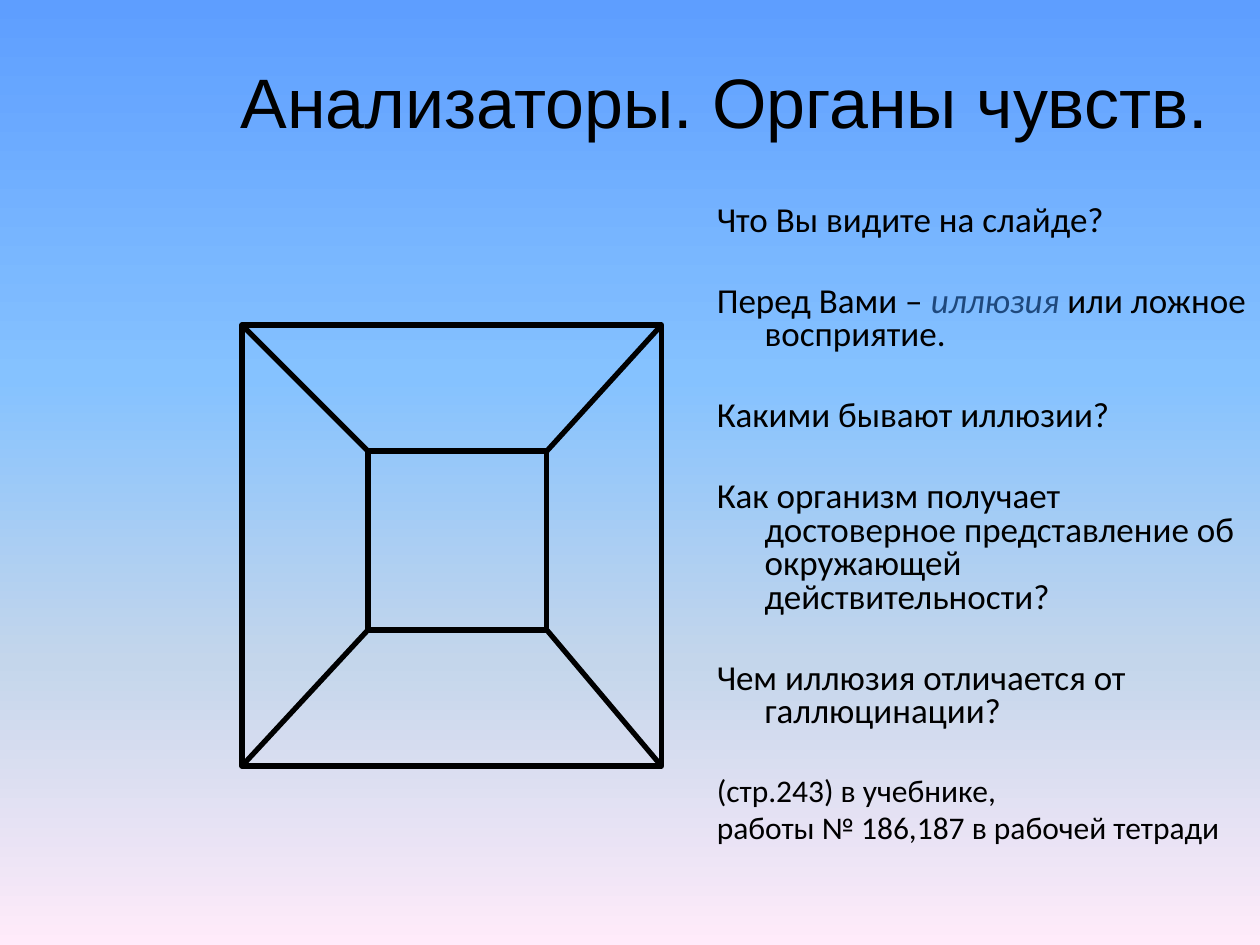
from copy import deepcopy

from lxml.etree import SubElement
from pptx import Presentation
from pptx.dml.color import RGBColor
from pptx.enum.shapes import MSO_CONNECTOR, MSO_SHAPE
from pptx.enum.text import MSO_ANCHOR, PP_ALIGN
from pptx.oxml.ns import qn
from pptx.util import Inches, Pt

BLACK = RGBColor(0x00, 0x00, 0x00)
NAVY = RGBColor(0x1F, 0x49, 0x7D)
SKY_STOPS = [
    (0, RGBColor(0x5E, 0x9E, 0xFF)),
    (0.4, RGBColor(0x85, 0xC2, 0xFF)),
    (0.7, RGBColor(0xC4, 0xD6, 0xEB)),
    (1, RGBColor(0xFF, 0xEB, 0xFA)),
]

WIDE_GAP = 27
NARROW_GAP = 4
QUESTIONS = [
    (["Что Вы видите на слайде?"], 20, NARROW_GAP),
    (["Перед Вами – ", "иллюзия ", "или ложное восприятие."], 20, WIDE_GAP),
    (["Какими бывают иллюзии?"], 20, WIDE_GAP),
    (["Как организм получает достоверное представление об окружающей действительности?"], 20, WIDE_GAP),
    (["Чем иллюзия отличается от галлюцинации?"], 20, WIDE_GAP),
    (["(стр.243) в учебнике,"], 18, WIDE_GAP),
    (["работы № 186,187 в рабочей тетради"], 18, NARROW_GAP),
]
EMPHASIS = "иллюзия "

OUTER = (1.92, 2.58, 5.25, 6.08)
INNER = (2.92, 3.58, 4.34, 5)


class SlideBuilder:
    """Holds the style and the current page, and adds each kind of element."""

    def __init__(self, page):
        self.page = page
        self.line_width = Pt(3)
        self.figure = page.shapes.add_group_shape()

    def background(self, stops):
        fill = self.page.background.fill
        fill.gradient()
        fill.gradient_angle = 270
        stop_list = fill.gradient_stops[0]._gs.getparent()
        for _ in range(len(stops) - len(fill.gradient_stops)):
            stop_list.append(deepcopy(stop_list[0]))
        for stop, (position, color) in zip(fill.gradient_stops, stops):
            stop.position = position
            stop.color.rgb = color

    def text_box(self, left, top, width, height, anchor=MSO_ANCHOR.TOP):
        box = self.page.shapes.add_textbox(
            Inches(left), Inches(top), Inches(width), Inches(height))
        box.text_frame.word_wrap = True
        box.text_frame.vertical_anchor = anchor
        return box.text_frame

    def style(self, span, font_name, size, color=BLACK, italic=False):
        span.font.name = font_name
        span.font.size = Pt(size)
        span.font.color.rgb = color
        span.font.italic = italic

    def title(self, text):
        frame = self.text_box(1.5, 0.27, 8.5, 1.06, MSO_ANCHOR.MIDDLE)
        frame.text = text
        para = frame.paragraphs[0]
        para.alignment = PP_ALIGN.CENTER
        self.style(para.runs[0], "Arial", 40)

    def questions(self, items):
        frame = self.text_box(5.59, 1.58, 4.41, 5.92)
        for index, (pieces, size, gap) in enumerate(items):
            para = frame.add_paragraph() if index else frame.paragraphs[0]
            para.line_spacing = 0.8
            para.space_before = Pt(gap)
            properties = para._p.get_or_add_pPr()
            properties.set("marL", str(Inches(0.38)))
            properties.set("indent", str(Inches(-0.38)))
            for piece in pieces:
                span = para.add_run()
                span.text = piece
                strong = piece == EMPHASIS
                self.style(span, "Calibri", size, NAVY if strong else BLACK, strong)

    def outline(self, left, top, right, bottom):
        box = self.figure.shapes.add_shape(
            MSO_SHAPE.RECTANGLE, Inches(left), Inches(top),
            Inches(right - left), Inches(bottom - top))
        box.shadow.inherit = False
        box.fill.background()
        box.line.color.rgb = BLACK
        box.line.width = self.line_width

    def edge(self, start, end):
        line = self.figure.shapes.add_connector(
            MSO_CONNECTOR.STRAIGHT, *(Inches(value) for value in start + end))
        line.line.color.rgb = BLACK
        line.line.width = self.line_width
        SubElement(line._element.spPr, qn("a:effectLst"))


def main():
    deck = Presentation()
    deck.slide_width, deck.slide_height = Inches(10), Inches(7.5)
    builder = SlideBuilder(deck.slides.add_slide(deck.slide_layouts[6]))
    builder.background(SKY_STOPS)
    builder.title("Анализаторы. Органы чувств.")
    builder.questions(QUESTIONS)
    builder.outline(*INNER)
    builder.outline(*OUTER)
    for x in (0, 2):
        for y in (1, 3):
            builder.edge((OUTER[x], OUTER[y]), (INNER[x], INNER[y]))
    deck.save("out.pptx")


if __name__ == "__main__":
    main()
